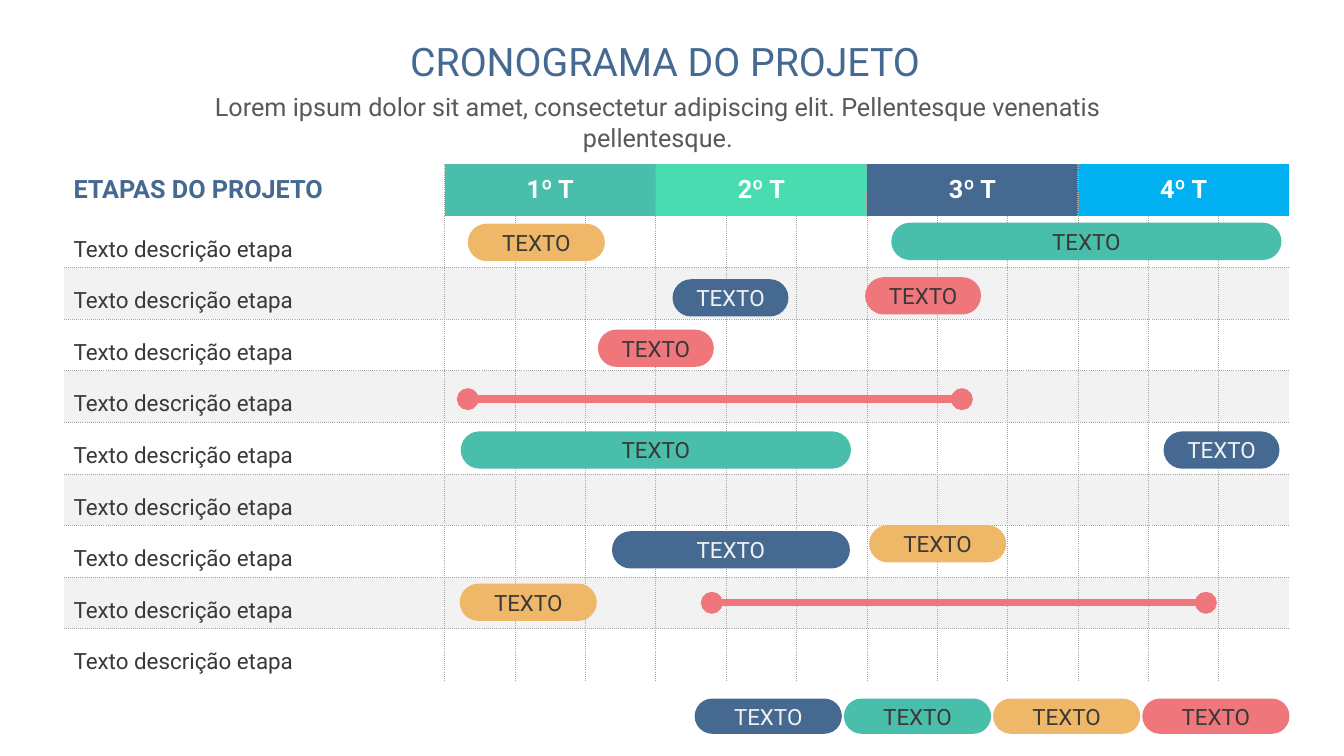
from dataclasses import dataclass

from lxml import etree
from pptx import Presentation
from pptx.dml.color import RGBColor
from pptx.enum.shapes import MSO_CONNECTOR, MSO_SHAPE
from pptx.enum.text import MSO_ANCHOR, PP_ALIGN
from pptx.oxml.ns import qn
from pptx.util import Inches, Pt

ROUNDED = MSO_SHAPE.ROUNDED_RECTANGLE
STRAIGHT = MSO_CONNECTOR.STRAIGHT
LEFT, CENTER = PP_ALIGN.LEFT, PP_ALIGN.CENTER
MIDDLE, BOTTOM = MSO_ANCHOR.MIDDLE, MSO_ANCHOR.BOTTOM


@dataclass(frozen=True)
class Theme:
    font: str = "Roboto"
    title_size: int = 28
    heading_size: int = 18
    body_size: int = 16
    navy: str = "456990"
    teal: str = "49BEAA"
    mint: str = "49DCB1"
    sky: str = "00B0F0"
    amber: str = "EEB868"
    coral: str = "EF767A"
    gray: str = "595959"
    dark: str = "3B3838"
    band: str = "F2F2F2"
    grid: str = "A6A6A6"
    white: str = "FFFFFF"


@dataclass(frozen=True)
class Box:
    left: float
    top: float
    width: float
    height: float


THEME = Theme()
STAGES = ["Texto descrição etapa"] * 9
QUARTERS = [("1º T", THEME.teal), ("2º T", THEME.mint),
            ("3º T", THEME.navy), ("4º T", THEME.sky)]
MONTHS = 3
LABEL_WIDTH = 3.78
BAR_HEIGHT = 0.37

# Offsets from the top left of the quarter grid: left, top, width, colour
BARS = [
    (0.23, 0.59, 1.36, THEME.amber),
    (4.43, 0.58, 3.87, THEME.teal),
    (2.26, 1.14, 1.15, THEME.navy),
    (4.17, 1.12, 1.15, THEME.coral),
    (1.52, 1.64, 1.15, THEME.coral),
    (0.16, 2.65, 3.87, THEME.teal),
    (7.13, 2.65, 1.15, THEME.navy),
    (1.66, 3.64, 2.36, THEME.navy),
    (4.21, 3.58, 1.36, THEME.amber),
    (0.15, 4.16, 1.36, THEME.amber),
]
# Left, top, length
SPANS = [(0.23, 2.33, 4.9), (2.65, 4.35, 4.9)]
LEGEND = [THEME.navy, THEME.teal, THEME.amber, THEME.coral]


def write(frame, text, size, color, align=LEFT, bold=False):
    para = frame.paragraphs[0]
    para.text = text
    para.alignment = align
    para.font.name = THEME.font
    para.font.size = Pt(size)
    para.font.bold = bold
    para.font.color.rgb = RGBColor.from_string(color)
    return para


def add_text(page, box, text, size, color, align, wrap):
    label = page.shapes.add_textbox(Inches(box.left), Inches(box.top),
                                    Inches(box.width), Inches(box.height))
    label.text_frame.word_wrap = wrap
    write(label.text_frame, text, size, color, align)


def add_heading(page, box):
    add_text(page, Box(box.left + 2.61, box.top, 5.4, 0.57),
             "CRONOGRAMA DO PROJETO", THEME.title_size, THEME.navy, LEFT, False)
    add_text(page, Box(box.left, box.top + 0.54, box.width, 0.4),
             "Lorem ipsum dolor sit amet, consectetur adipiscing elit. "
             "Pellentesque venenatis pellentesque.",
             THEME.heading_size, THEME.gray, CENTER, True)


def set_borders(cell, widths):
    """Draw dotted edges; a width of 0 leaves that edge empty."""
    properties = cell._tc.get_or_add_tcPr()
    for index, (side, width) in enumerate(zip("LRTB", widths)):
        edge = etree.Element(qn(f"a:ln{side}"), w=str(Pt(width)))
        properties.insert(index, edge)
        if not width:
            etree.SubElement(edge, qn("a:noFill"))
            continue
        fill = etree.SubElement(edge, qn("a:solidFill"))
        etree.SubElement(fill, qn("a:srgbClr"), val=THEME.grid)
        etree.SubElement(edge, qn("a:prstDash"), val="sysDot")


def fill_cell(cell, color):
    if color:
        cell.fill.solid()
        cell.fill.fore_color.rgb = RGBColor.from_string(color)
    else:
        cell.fill.background()


def add_schedule(page, box):
    row_count = len(STAGES) + 1
    column_count = len(QUARTERS) * MONTHS + 1
    table = page.shapes.add_table(
        row_count, column_count, Inches(box.left), Inches(box.top),
        Inches(box.width), Inches(box.height)).table
    table.first_row = table.horz_banding = False
    for row in table.rows:
        row.height = Inches(box.height / row_count)
    for column in table.columns:
        column.width = Inches((box.width - LABEL_WIDTH) / (column_count - 1))
    table.columns[0].width = Inches(LABEL_WIDTH)

    # Grid lines lie between cells; the header only has quarter lines
    def vertical(row, edge):
        if not 0 < edge < column_count:
            return 0
        if row == 0:
            return 1 if edge % MONTHS == 1 else 0
        return 0.5

    def horizontal(edge):
        return 0.5 if 1 < edge < row_count else 0

    for row in range(row_count):
        for column in range(column_count):
            cell = table.cell(row, column)
            fill_cell(cell, THEME.band if row and row % 2 == 0 else None)
            set_borders(cell, (vertical(row, column), vertical(row, column + 1),
                               horizontal(row), horizontal(row + 1)))

    # Header
    corner = table.cell(0, 0)
    corner.vertical_anchor = MIDDLE
    write(corner.text_frame, "ETAPAS DO PROJETO", THEME.heading_size,
          THEME.navy, bold=True)
    for index, (name, color) in enumerate(QUARTERS):
        first = 1 + index * MONTHS
        quarter = table.cell(0, first)
        quarter.merge(table.cell(0, first + MONTHS - 1))
        quarter.vertical_anchor = MIDDLE
        fill_cell(quarter, color)
        write(quarter.text_frame, name, THEME.heading_size, THEME.white,
              CENTER, True)

    # Stage names
    for row, stage in enumerate(STAGES, start=1):
        cell = table.cell(row, 0)
        cell.vertical_anchor = BOTTOM
        para = write(cell.text_frame, stage, THEME.body_size, THEME.dark)
        para.space_before = Pt(6)


def add_pill(page, box, color):
    pill = page.shapes.add_shape(ROUNDED, Inches(box.left), Inches(box.top),
                                 Inches(box.width), Inches(box.height))
    pill.adjustments[0] = 0.5
    pill.shadow.inherit = False
    pill.fill.solid()
    pill.fill.fore_color.rgb = RGBColor.from_string(color)
    pill.line.fill.background()
    pill.text_frame.vertical_anchor = MIDDLE
    ink = THEME.band if color == THEME.navy else THEME.dark
    write(pill.text_frame, "TEXTO", THEME.body_size, ink, CENTER)


def add_activities(page, box):
    for left, top, width, color in BARS:
        add_pill(page, Box(box.left + left, box.top + top, width, BAR_HEIGHT), color)
    for left, top, length in SPANS:
        start, level = box.left + left, Inches(box.top + top)
        span = page.shapes.add_connector(STRAIGHT, Inches(start), level,
                                         Inches(start + length), level)
        span.line.color.rgb = RGBColor.from_string(THEME.coral)
        span.line.width = Pt(5.25)
        for end in ("a:headEnd", "a:tailEnd"):
            etree.SubElement(span.line._get_or_add_ln(), qn(end), type="oval")
        etree.SubElement(span._element.spPr, qn("a:effectLst"))


def add_legend(page, box):
    gap = 0.02
    width = (box.width - gap * (len(LEGEND) - 1)) / len(LEGEND)
    for index, color in enumerate(LEGEND):
        left = box.left + index * (width + gap)
        add_pill(page, Box(left, box.top, width, box.height), color)


def main():
    deck = Presentation()
    deck.slide_width, deck.slide_height = Inches(13.33), Inches(7.5)
    page = deck.slides.add_slide(deck.slide_layouts[6])
    schedule = Box(0.63, 1.63, 12.16, 5.12)
    add_heading(page, Box(1.36, 0.32, 10.33, 0.94))
    add_schedule(page, schedule)
    add_activities(page, Box(schedule.left + LABEL_WIDTH, schedule.top,
                             schedule.width - LABEL_WIDTH, schedule.height))
    add_legend(page, Box(6.89, 6.93, 5.9, 0.35))
    deck.save("out.pptx")


if __name__ == "__main__":
    main()
